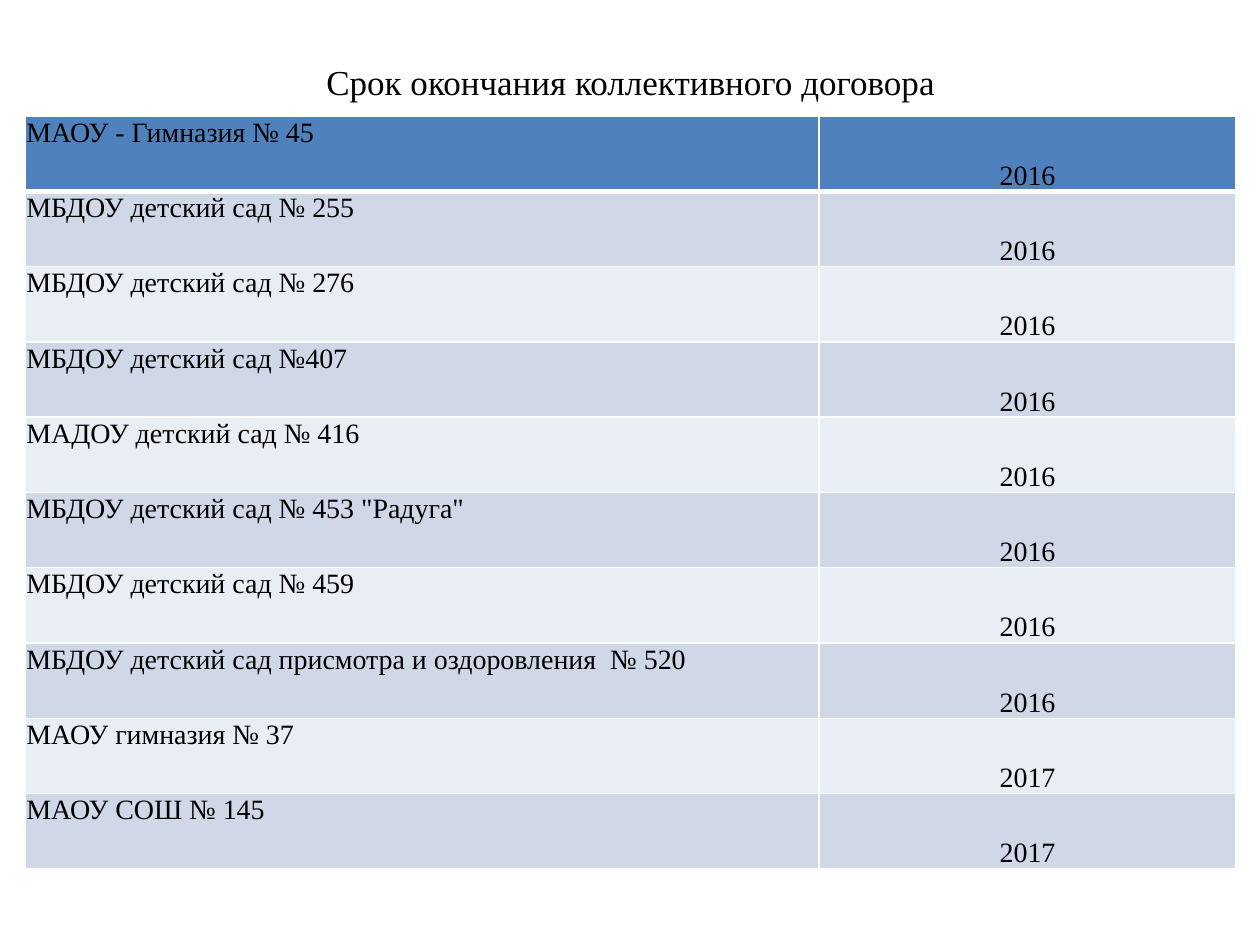
from lxml import etree
from pptx import Presentation
from pptx import util as u
from pptx.dml.color import RGBColor
from pptx.enum import text
from pptx.oxml import ns

COLORS = {"text": "000000", "border": "FFFFFF", "header": "4F81BD",
          "odd": "D0D8E8", "even": "E9EDF4"}

AGREEMENTS = [
    ("МАОУ - Гимназия № 45", "2016"),
    ("МБДОУ детский сад № 255", "2016"),
    ("МБДОУ детский сад № 276", "2016"),
    ("МБДОУ детский сад №407", "2016"),
    ("МАДОУ детский сад № 416", "2016"),
    ("МБДОУ детский сад № 453 \"Радуга\"", "2016"),
    ("МБДОУ детский сад № 459", "2016"),
    ("МБДОУ детский сад присмотра и оздоровления  № 520", "2016"),
    ("МАОУ гимназия № 37", "2017"),
    ("МАОУ СОШ № 145", "2017"),
]


class Deck:
    font = "Times New Roman"
    title_size = 20
    cell_size = 16
    columns = 100
    rows = 75

    def __init__(self, width, height):
        self.prs = Presentation()
        self.prs.slide_width = u.Inches(width)
        self.prs.slide_height = u.Inches(height)
        self.s = self.prs.slides.add_slide(self.prs.slide_layouts[5])

    def box(self, x, y, w, h):
        dx = self.prs.slide_width / self.columns
        dy = self.prs.slide_height / self.rows
        return [int(v) for v in (x * dx, y * dy, w * dx, h * dy)]

    def set_text(self, tf, value, size, align):
        tf.text = value
        p = tf.paragraphs[0]
        p.alignment = align
        for r in p.runs:
            r.font.name = self.font
            r.font.size = u.Pt(size)
            r.font.bold = False
            r.font.color.rgb = RGBColor.from_string(COLORS["text"])

    def title(self, value, *area):
        sp = self.s.shapes.title
        sp.left, sp.top, sp.width, sp.height = self.box(*area)
        tf = sp.text_frame
        tf.word_wrap = True
        tf.vertical_anchor = text.MSO_ANCHOR.MIDDLE
        self.set_text(tf, value, self.title_size, text.PP_ALIGN.CENTER)

    def borders(self, cell, **widths):
        tc_pr = cell._tc.get_or_add_tcPr()
        for i, (side, width) in enumerate(widths.items()):
            ln = etree.Element(ns.qn(f"a:ln{side}"), w=str(u.Pt(width)))
            fill = etree.SubElement(ln, ns.qn("a:solidFill"))
            etree.SubElement(fill, ns.qn("a:srgbClr"), val=COLORS["border"])
            tc_pr.insert(i, ln)

    def cell(self, cell, value, row, is_year):
        cell.margin_left = cell.margin_right = cell.margin_top = u.Inches(0.01)
        cell.margin_bottom = 0
        cell.vertical_anchor = text.MSO_ANCHOR.BOTTOM if is_year else text.MSO_ANCHOR.TOP
        align = text.PP_ALIGN.CENTER if is_year else text.PP_ALIGN.LEFT
        self.set_text(cell.text_frame, value, self.cell_size, align)
        band = "header" if row == 0 else "odd" if row % 2 else "even"
        cell.fill.solid()
        cell.fill.fore_color.rgb = RGBColor.from_string(COLORS[band])
        self.borders(cell, L=1, R=1, T=3 if row == 1 else 1, B=3 if row == 0 else 1)

    def table(self, rows, widths, *area):
        x, y, w, h = self.box(*area)
        table = self.s.shapes.add_table(len(rows), len(widths), x, y, w, h).table
        for column, width in zip(table.columns, widths):
            column.width = int(w * width / sum(widths))
        for i, values in enumerate(rows):
            for j, value in enumerate(values):
                self.cell(table.cell(i, j), value, i, j == 1)


def main():
    deck = Deck(10, 7.5)
    deck.title("Срок окончания коллективного договора", 5.1, 3, 89.9, 6.9)
    deck.table(AGREEMENTS, (63, 33.1), 2, 9.2, 96.1, 59.8)
    deck.prs.save("out.pptx")


if __name__ == "__main__":
    main()
